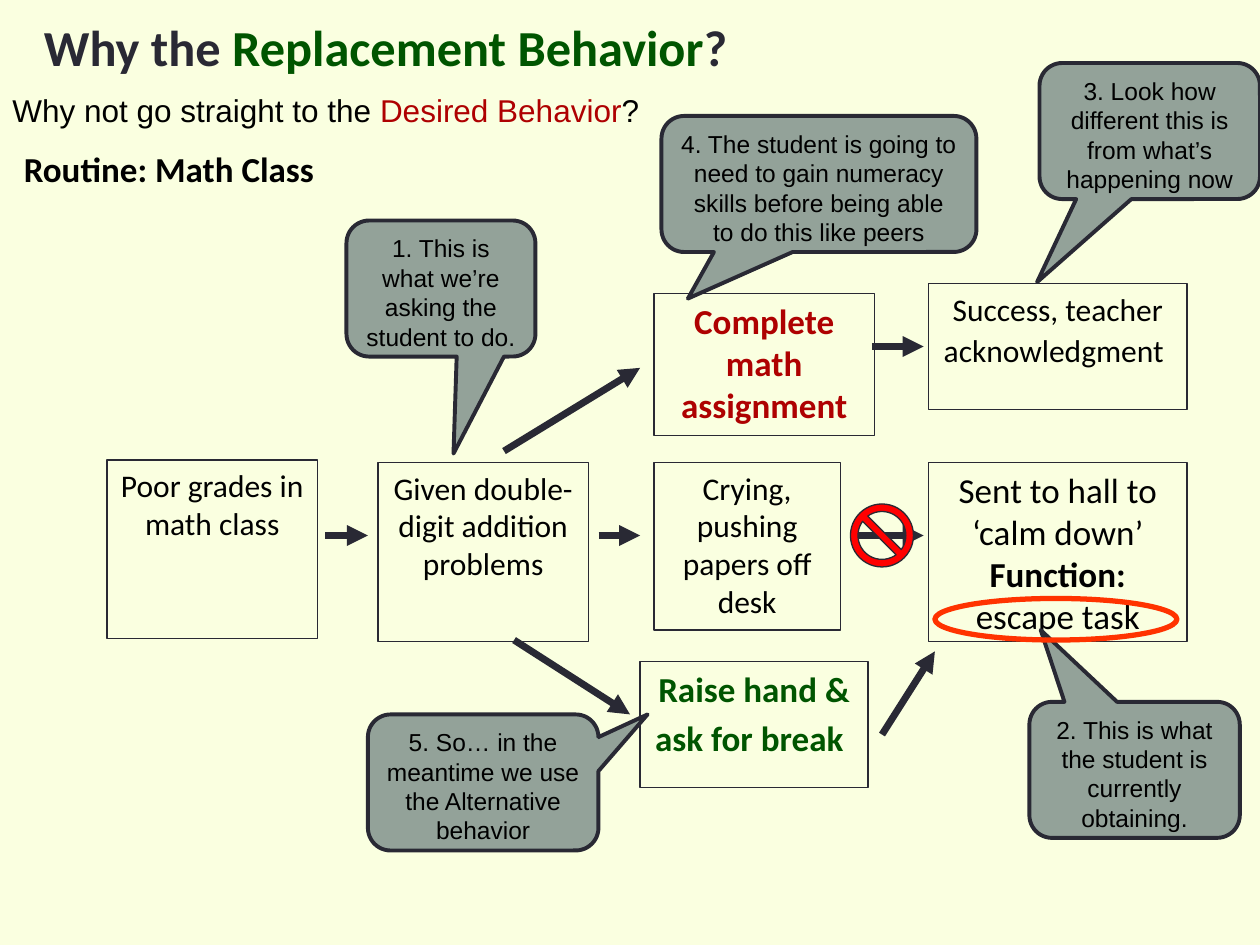
from lxml import etree
from pptx import Presentation
from pptx.dml.color import RGBColor
from pptx.enum.shapes import MSO_CONNECTOR, MSO_SHAPE
from pptx.enum.text import MSO_ANCHOR, PP_ALIGN
from pptx.oxml.ns import qn
from pptx.util import Inches, Pt

RECT, OVAL = MSO_SHAPE.RECTANGLE, MSO_SHAPE.OVAL
BUBBLE, BAN = MSO_SHAPE.ROUNDED_RECTANGULAR_CALLOUT, MSO_SHAPE.NO_SYMBOL
STRAIGHT = MSO_CONNECTOR.STRAIGHT
TOP, MIDDLE = MSO_ANCHOR.TOP, MSO_ANCHOR.MIDDLE
LEFT, CENTER = PP_ALIGN.LEFT, PP_ALIGN.CENTER

THEME = {
    "back": "FAFFE0", "ink": "292934", "text": "000000", "green": "005500",
    "red": "AE0101", "bubble": "93A299", "ban": "FF0000", "ring": "FF3300",
    "title": 28.8, "big": 20, "body": 18, "note": 14, "gap": 24,
    "head": "Calibri", "sans": "Arial",
    "thin": 0.75, "edge": 2.25, "bold": 3, "arrow": 4,
}

# A run is (text, size, colour, bold).
HEADS = [
    ((0.25, 0.08, 9.5, 0.58), "head", MIDDLE,
     [("Why the ", "title", "ink", True),
      ("Replacement Behavior", "title", "green", True),
      ("?", "title", "ink", True)]),
    ((0, 0.67, 10, 0.4), "sans", TOP,
     [("Why not go straight to the ", "body", "text", False),
      ("Desired Behavior", "body", "red", False),
      ("?", "body", "text", False)]),
    ((0.09, 1.12, 3.58, 0.43), "head", TOP,
     [("Routine: Math Class", "big", "text", True)]),
]

STEPS = [
    ((0.85, 3.65, 1.67, 1.42),
     [("Poor grades in math class", "body", "text", False)]),
    ((3, 3.67, 1.67, 1.42),
     [("Given double-digit addition problems", "body", "text", False)]),
    ((5.19, 2.33, 1.75, 1.13),
     [("Complete math assignment", "big", "red", True)]),
    ((5.19, 3.67, 1.48, 1.33),
     [("Crying, pushing papers off desk", "body", "text", False)]),
    ((5.08, 5.25, 1.81, 1),
     [("Raise hand & ask for break", "big", "green", True),
      (" ", "gap", "green", True)]),
    ((7.37, 2.25, 2.05, 1),
     [("Success, teacher acknowledgment", "body", "text", False),
      (" ", "big", "text", False)]),
    ((7.37, 3.67, 2.05, 1.42),
     [("Sent to hall to ‘calm down’ ", "big", "text", False),
      ("Function:", "big", "text", True),
      (" escape task", "big", "text", False)]),
]

ARROWS = [  # start x, y, end x, y
    (2.58, 4.25, 2.92, 4.25), (4.75, 4.25, 5.08, 4.25),
    (6.75, 4.25, 7.33, 4.25), (6.92, 2.75, 7.33, 2.75),
    (4, 3.58, 5.08, 2.92), (4.08, 5.08, 5, 5.67), (7, 5.83, 7.42, 5.17),
]

NOTES = [  # left, top, width; tip; text
    ((2.75, 1.75, 1.5), (3.6, 3.6),
     "1. This is what we’re asking the student to do."),
    ((8.17, 5.57, 1.67), (8.26, 5),
     "2. This is what the student is currently obtaining."),
    ((8.25, 0.5, 1.75), (8.23, 2.24),
     "3. Look how different this is from what’s happening now"),
    ((5.25, 0.92, 2.5), (5.46, 2.37),
     "4. The student is going to need to gain numeracy skills "
     "before being able to do this like peers"),
    ((2.92, 5.67, 1.83), (5.14, 5.67),
     "5. So… in the meantime we use the Alternative behavior"),
]
NOTE_H = 1.08
BAN_AT = (6.75, 4, 0.5, 0.5)
RING_AT = (7.42, 4.75, 1.92, 0.33)


def tint(name):
    return RGBColor.from_string(THEME[name])


def write(shape, runs, face, align, anchor=TOP):
    frame = shape.text_frame
    frame.word_wrap = True
    frame.vertical_anchor = anchor
    para = frame.paragraphs[0]
    para.alignment = align
    for text, size, color, bold in runs:
        run = para.add_run()
        run.text = text
        style = {"name": THEME[face], "size": Pt(THEME[size]), "bold": bold}
        for key, value in style.items():
            setattr(run.font, key, value)
        run.font.color.rgb = tint(color)


def draw(slide, kind, at, fill=None, line="ink", width="thin"):
    shape = slide.shapes.add_shape(kind, *map(Inches, at))
    shape.shadow.inherit = False
    if fill:
        shape.fill.solid()
        shape.fill.fore_color.rgb = tint(fill)
    else:
        shape.fill.background()
    shape.line.color.rgb = tint(line)
    shape.line.width = Pt(THEME[width])
    return shape


def arrow(slide, ends):
    link = slide.shapes.add_connector(STRAIGHT, *map(Inches, ends))
    link.line.color.rgb = tint("ink")
    link.line.width = Pt(THEME["arrow"])
    etree.SubElement(link.line._get_or_add_ln(), qn("a:tailEnd"), type="triangle")
    etree.SubElement(link._element.spPr, qn("a:effectLst"))


def note(slide, place, tip, text):
    """Draw a callout whose pointer ends at tip."""
    x, y, w = place
    shape = draw(slide, BUBBLE, (x, y, w, NOTE_H), "bubble", width="edge")
    shape.adjustments[0] = (tip[0] - x) / w - 0.5
    shape.adjustments[1] = (tip[1] - y) / NOTE_H - 0.5
    write(shape, [(text, "note", "text", False)], "sans", CENTER)


def main():
    deck = Presentation()
    deck.slide_width, deck.slide_height = Inches(10), Inches(7.5)
    slide = deck.slides.add_slide(deck.slide_layouts[6])
    slide.background.fill.solid()
    slide.background.fill.fore_color.rgb = tint("back")

    for at, face, anchor, runs in HEADS:
        box = slide.shapes.add_textbox(*map(Inches, at))
        write(box, runs, face, LEFT, anchor)
    for at, runs in STEPS:
        write(draw(slide, RECT, at), runs, "head", CENTER)
    for ends in ARROWS:
        arrow(slide, ends)
    for place, tip, text in NOTES:
        note(slide, place, tip, text)
    ban = draw(slide, BAN, BAN_AT, "ban")
    ban.adjustments[0] = 0.12
    draw(slide, OVAL, RING_AT, line="ring", width="bold")
    deck.save("out.pptx")


if __name__ == "__main__":
    main()
